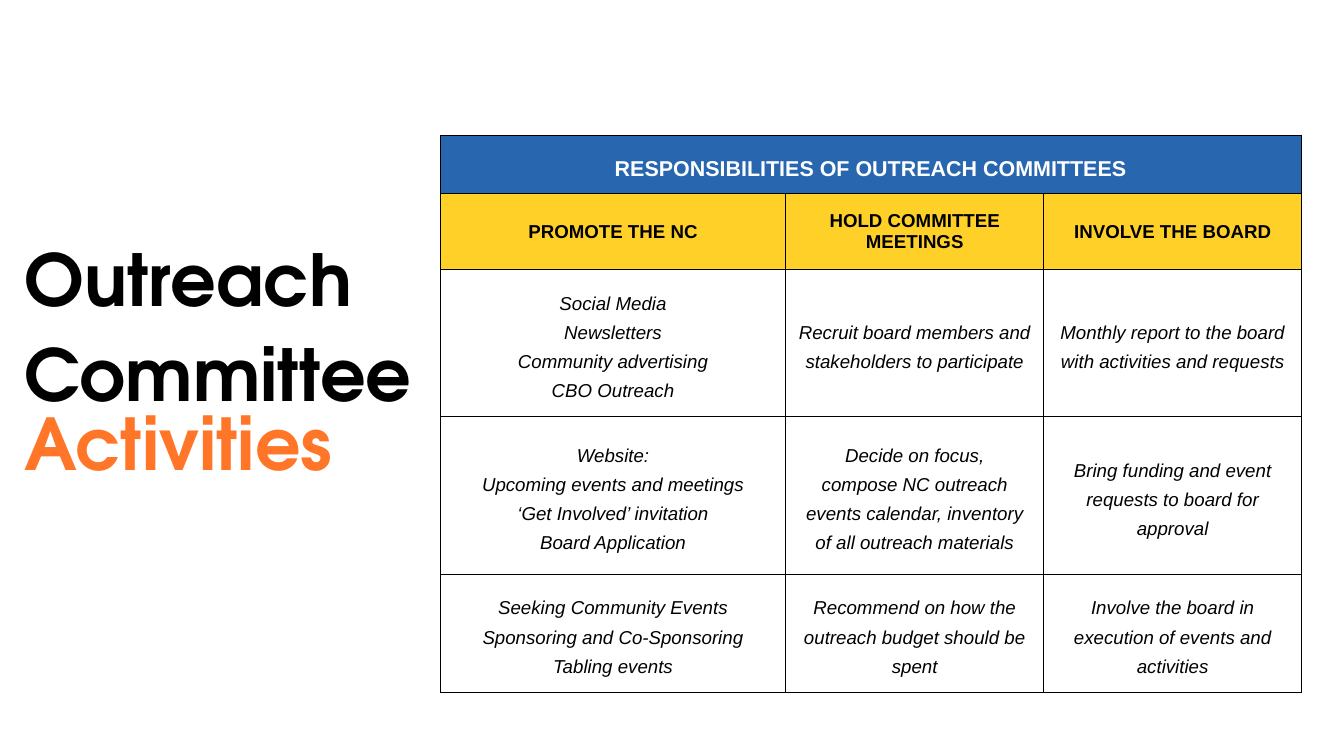
"""Build the outreach committee activities slide."""
from pptx import Presentation
from pptx.dml.color import RGBColor
from pptx.enum import text
from pptx.oxml import parse_xml
from pptx.oxml.ns import nsdecls
from pptx.util import Cm, Pt

HEADING = "RESPONSIBILITIES OF OUTREACH COMMITTEES"
COLUMN_HEADS = ["PROMOTE THE NC", "HOLD COMMITTEE MEETINGS", "INVOLVE THE BOARD"]
ACTIVITIES = [
    [["Social Media", "Newsletters", "Community advertising", "CBO Outreach"],
     ["Recruit board members and stakeholders to participate"],
     ["Monthly report to the board with activities and requests"]],
    [["Website:", "Upcoming events and meetings", "‘Get Involved’ invitation",
      "Board Application"],
     ["Decide on focus,",
      "compose NC outreach events calendar, inventory of all outreach materials"],
     ["Bring funding and event requests to board for approval"]],
    [["Seeking Community Events", "Sponsoring and Co-Sponsoring", "Tabling events"],
     ["Recommend on how the outreach budget should be spent"],
     ["Involve the board in execution of events and activities"]],
]
COL_WIDTHS = [13.06, 9.75, 9.75]
ROW_HEIGHTS = [2.21, 2.87, 4.98, 5.97, 4.45]


def rgb(value):
    """Return the colour for a hex string."""
    return RGBColor.from_string(value)


def add_run(p, words, font, size, color, bold=True, italic=False):
    """Add one formatted run to a paragraph."""
    r = p.add_run()
    r.text = words
    r.font.name, r.font.size = font, Pt(size)
    r.font.bold, r.font.italic = bold, italic
    r.font.color.rgb = rgb(color)


def write_title(sp, words, box, size, color, align):
    """Place a shape and fill it with large title text."""
    sp.left, sp.top, sp.width, sp.height = (Cm(v) for v in box)
    tf = sp.text_frame
    tf.word_wrap = True
    tf.auto_size = text.MSO_AUTO_SIZE.SHAPE_TO_FIT_TEXT
    tf.vertical_anchor = text.MSO_ANCHOR.TOP
    tf.margin_left = tf.margin_top = tf.margin_right = tf.margin_bottom = 0
    p = tf.paragraphs[0]
    p.alignment, p.line_spacing, p.space_before = align, 1.1, Pt(0)
    add_run(p, words, "TeX Gyre Adventor", size, color)


def add_borders(cell, color="000000", width=1.25):
    """Draw a line on all four sides of a cell."""
    tc_pr = cell._tc.get_or_add_tcPr()
    for side in ("lnL", "lnR", "lnT", "lnB"):
        tc_pr.append(parse_xml(
            f'<a:{side} {nsdecls("a")} w="{Pt(width)}"><a:solidFill>'
            f'<a:srgbClr val="{color}"/></a:solidFill></a:{side}>'))


def write_cell(cell, lines, size=20, color="000000", fill=None, spacing=1.4,
               italic=False):
    """Fill a cell with centred paragraphs."""
    cell.vertical_anchor = text.MSO_ANCHOR.MIDDLE
    cell.margin_left = cell.margin_right = Cm(0.41)
    cell.margin_top = cell.margin_bottom = Cm(0.41)
    if fill:
        cell.fill.solid()
        cell.fill.fore_color.rgb = rgb(fill)
    else:
        cell.fill.background()
    tf = cell.text_frame
    for i, line in enumerate(lines):
        p = tf.add_paragraph() if i else tf.paragraphs[0]
        p.alignment, p.line_spacing = text.PP_ALIGN.CENTER, spacing
        add_run(p, line, "Arial", size, color, not italic, italic)


def add_responsibilities(s):
    """Add the table of committee responsibilities."""
    frame = s.shapes.add_table(len(ROW_HEIGHTS), len(COL_WIDTHS), Cm(16.64), Cm(5.11),
                               Cm(sum(COL_WIDTHS)), Cm(sum(ROW_HEIGHTS)))
    table = frame.table
    table.first_row = table.horz_banding = False
    for column, width in zip(table.columns, COL_WIDTHS):
        column.width = Cm(width)
    for row, height in zip(table.rows, ROW_HEIGHTS):
        row.height = Cm(height)
    for cell in table.iter_cells():
        add_borders(cell)
    table.cell(0, 0).merge(table.cell(0, len(COL_WIDTHS) - 1))
    write_cell(table.cell(0, 0), [HEADING], 23, "FFFFFF", "2866B0")
    for c, head in enumerate(COLUMN_HEADS):
        write_cell(table.cell(1, c), [head], fill="FFD028", spacing=1.0)
    for r, row in enumerate(ACTIVITIES, start=2):
        for c, lines in enumerate(row):
            write_cell(table.cell(r, c), lines, italic=True)


def main():
    """Build and save the slide."""
    prs = Presentation()
    prs.slide_width, prs.slide_height = Cm(50.8), Cm(28.58)
    s = prs.slides.add_slide(prs.slide_layouts[5])
    add_responsibilities(s)
    write_title(s.shapes.title, "Outreach Committee", (0.91, 8.56, 14.71, 6.43),
                76.8, "000000", text.PP_ALIGN.JUSTIFY)
    write_title(s.shapes.add_textbox(0, 0, 0, 0), "Activities",
                (0.91, 14.76, 14.17, 3.48), 76.5, "FF7628", text.PP_ALIGN.LEFT)
    prs.save("out.pptx")


if __name__ == "__main__":
    main()
